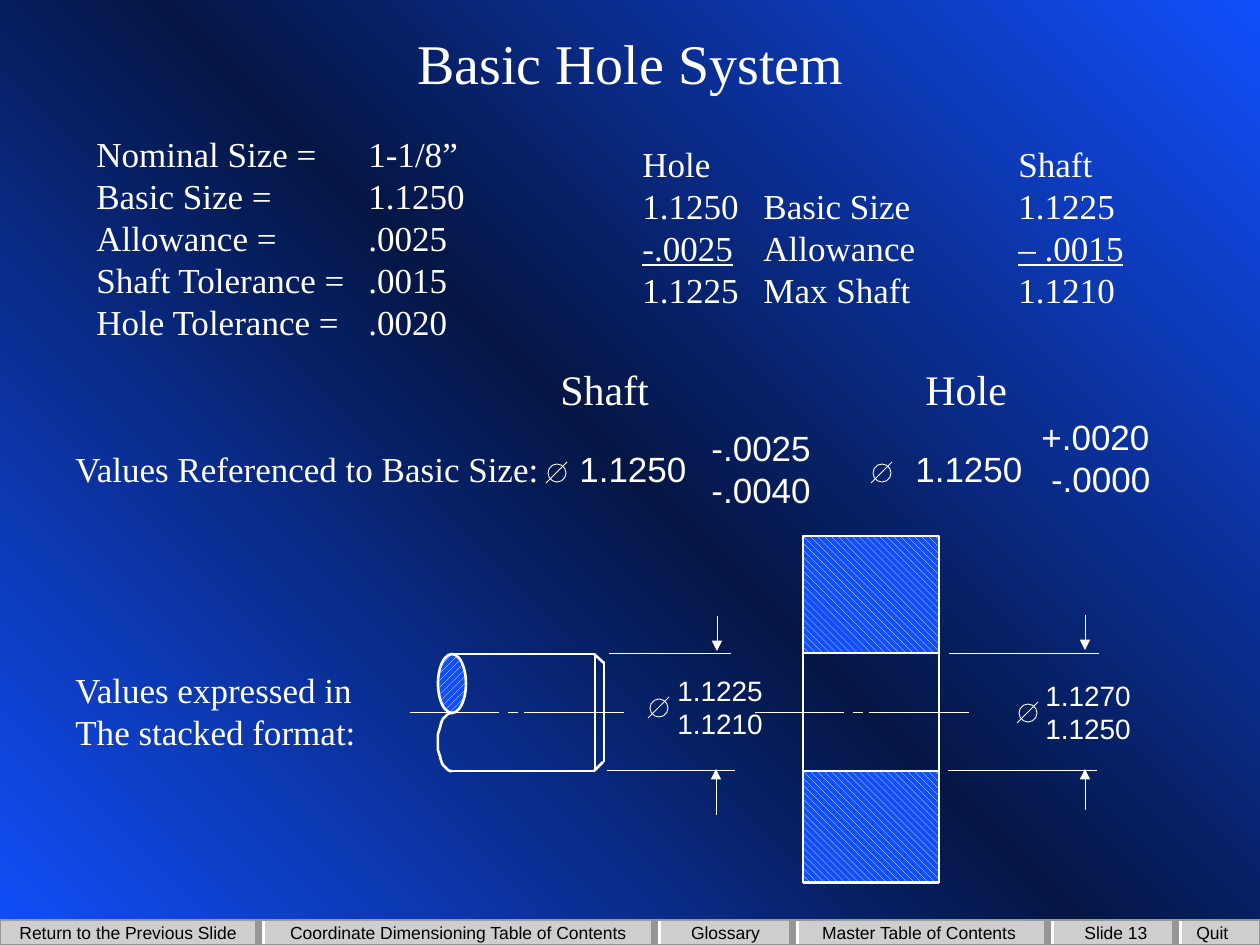
from copy import deepcopy
from dataclasses import dataclass
from math import cos, pi, sin

from pptx import Presentation
from pptx.dml.color import RGBColor
from pptx.enum.dml import MSO_PATTERN
from pptx.enum.shapes import MSO_CONNECTOR, MSO_SHAPE
from pptx.enum.text import MSO_ANCHOR, PP_ALIGN
from pptx.oxml.ns import qn
from pptx.oxml.xmlchemy import OxmlElement
from pptx.util import Inches, Pt


@dataclass(frozen=True)
class Theme:
    white: RGBColor = RGBColor.from_string("FFFFFF")
    black: RGBColor = RGBColor.from_string("000000")
    bright: RGBColor = RGBColor.from_string("114FFB")
    navy: RGBColor = RGBColor.from_string("051645")
    button: RGBColor = RGBColor.from_string("CECECE")
    groove: RGBColor = RGBColor.from_string("969696")
    serif: str = "Times New Roman"
    sans: str = "Arial"
    title: int = 32
    heading: int = 24
    body: int = 20
    stacked: int = 16
    footer: int = 10
    outline: float = 1.5
    thin: float = 0.5
    divider: float = 4
    border: float = 1.25


def px(length):
    return Inches(length / 126)


def write(frame, text, size, font, color, align=PP_ALIGN.LEFT, stops=(),
          underlined=(), anchor=MSO_ANCHOR.TOP, wrap=True):
    frame.word_wrap = wrap
    frame.vertical_anchor = anchor
    for row, line in enumerate(text.split("\n")):
        paragraph = frame.add_paragraph() if row else frame.paragraphs[0]
        paragraph.alignment = align
        if stops:
            tabs = OxmlElement("a:tabLst")
            for stop in stops:
                tab = OxmlElement("a:tab")
                tab.set("pos", str(px(stop)))
                tab.set("algn", "l")
                tabs.append(tab)
            paragraph._p.get_or_add_pPr().append(tabs)
        for column, cell in enumerate(line.split("\t")):
            for piece in (["\t"] if column else []) + [cell]:
                run = paragraph.add_run()
                run.text = piece
                run.font.size = Pt(size)
                run.font.name = font
                run.font.color.rgb = color
                run.font.underline = piece in underlined


class Drawing:
    """Draws styled elements on the current slide."""

    def __init__(self, slide, theme):
        self.slide = slide
        self.shapes = slide.shapes
        self.theme = theme

    def background(self, *colors):
        fill = self.slide.background.fill
        fill.gradient()
        fill.gradient_angle = 45
        first = next(self.slide._element.iter(qn("a:gs")))
        first.addnext(deepcopy(first))
        for index, (stop, color) in enumerate(zip(fill.gradient_stops, colors)):
            stop.position = index / (len(colors) - 1)
            stop.color.rgb = color

    def text(self, left, top, width, height, content, size=None, font=None,
             color=None, **layout):
        box = self.shapes.add_textbox(px(left), px(top), px(width), px(height))
        write(box.text_frame, content, size or self.theme.body,
              font or self.theme.serif, color or self.theme.white, **layout)

    def finish(self, shape, fill=None, pattern=None, line=None, weight=None):
        shape.shadow.inherit = False
        if pattern is not None:
            shape.fill.patterned()
            shape.fill.pattern = pattern
            shape.fill.fore_color.rgb = self.theme.white
            shape.fill.back_color.rgb = self.theme.bright
        elif fill is not None:
            shape.fill.solid()
            shape.fill.fore_color.rgb = fill
        else:
            shape.fill.background()
        if line is None:
            shape.line.fill.background()
        else:
            shape.line.color.rgb = line
            shape.line.width = Pt(weight)

    def shape(self, kind, left, top, width, height, **style):
        shape = self.shapes.add_shape(kind, px(left), px(top), px(width), px(height))
        self.finish(shape, **style)
        return shape

    def curve(self, points, weight):
        builder = self.shapes.build_freeform(*points[0], scale=px(1))
        builder.add_line_segments(points[1:], close=False)
        self.finish(builder.convert_to_shape(), line=self.theme.white, weight=weight)

    def line(self, x1, y1, x2, y2, weight=None, color=None, arrow=False):
        line = self.shapes.add_connector(
            MSO_CONNECTOR.STRAIGHT, px(x1), px(y1), px(x2), px(y2))
        line.line.color.rgb = color or self.theme.white
        line.line.width = Pt(weight or self.theme.thin)
        if arrow:
            head = OxmlElement("a:headEnd")
            head.set("type", "triangle")
            line.line._get_or_add_ln().append(head)
        line._element.spPr.append(OxmlElement("a:effectLst"))

    def diameter(self, left, top):
        self.shape(MSO_SHAPE.OVAL, left, top, 18, 18,
                   line=self.theme.white, weight=self.theme.thin)
        self.line(left + 19, top - 2, left - 2, top + 19)

    def button(self, left, width, label):
        button = self.shape(MSO_SHAPE.RECTANGLE, left, 921, width, 23,
                            fill=self.theme.button)
        write(button.text_frame, label, self.theme.footer, self.theme.sans,
              self.theme.black, align=PP_ALIGN.CENTER,
              anchor=MSO_ANCHOR.MIDDLE, wrap=False)


def draw_footer(drawing, theme):
    drawing.shape(MSO_SHAPE.RECTANGLE, 0, 920, 1260, 25, fill=theme.button,
                  line=theme.groove, weight=theme.border)
    for left, width, label in ((2, 252, "Return to the Previous Slide"),
                               (267, 382, "Coordinate Dimensioning Table of Contents"),
                               (663, 125, "Glossary"),
                               (815, 208, "Master Table of Contents")):
        drawing.button(left, width, label)
    for left, width, label in ((1072, 95, "Slide 13"), (1184, 63, "Quit")):
        drawing.text(left, 921, width, 23, label, theme.footer, theme.sans,
                     theme.black, anchor=MSO_ANCHOR.MIDDLE, wrap=False)
    for x in (262, 658, 796, 1051, 1179):
        drawing.line(x, 944, x, 921, theme.divider)
        drawing.line(x - 3, 944, x - 3, 921, theme.divider, theme.groove)


def draw_parts(drawing, theme):
    outline = {"line": theme.white, "weight": theme.outline}
    angles = [pi * (1.5 - step / 24) for step in range(25)]
    drawing.curve([(round(452 + 14 * cos(a), 2), round(742 + 29 * sin(a), 2))
                   for a in angles], theme.outline)
    drawing.shape(MSO_SHAPE.OVAL, 438, 654, 28, 59,
                  pattern=MSO_PATTERN.WIDE_UPWARD_DIAGONAL, **outline)
    shaft = ((452, 654, 595, 654), (452, 771, 595, 771), (595, 654, 595, 771),
             (594, 654, 604, 663), (604, 662, 604, 762), (594, 771, 603, 762))
    bushing = ((803, 536, 803, 883), (803, 883, 939, 883), (939, 883, 939, 536),
               (939, 536, 803, 536), (803, 653, 939, 653), (803, 771, 939, 771))
    for edge in shaft + bushing:
        drawing.line(*edge, theme.outline)
    for top, height in ((536, 117), (771, 111)):
        drawing.shape(MSO_SHAPE.RECTANGLE, 803, top, 136, height,
                      pattern=MSO_PATTERN.WIDE_DOWNWARD_DIAGONAL, **outline)
    for offset in (0, 345):
        for start, end in ((410, 499), (508, 518), (524, 624)):
            drawing.line(start + offset, 712, end + offset, 712)
    for start, end, y in ((609, 731, 653), (607, 735, 770),
                          (949, 1099, 653), (948, 1097, 770)):
        drawing.line(start, y, end, y)
    for x, tip, tail in ((717, 651, 616), (716, 769, 815),
                         (1085, 650, 615), (1085, 769, 810)):
        drawing.line(x, tip, x, tail, arrow=True)


def draw_values(drawing, theme):
    drawing.text(95, 21, 1071, 82, "Basic Hole System", theme.title,
                 align=PP_ALIGN.CENTER, anchor=MSO_ANCHOR.MIDDLE)
    drawing.text(84, 126, 406, 224,
                 "Nominal Size =\t1-1/8”\nBasic Size =\t1.1250\nAllowance =\t.0025\n"
                 "Shaft Tolerance =\t.0015\nHole Tolerance =\t.0020", stops=(272,))
    drawing.text(630, 136, 600, 183,
                 "Hole\t\tShaft\n1.1250\tBasic Size\t1.1225\n"
                 "-.0025\tAllowance\t– .0015\n1.1225\tMax Shaft\t1.1210",
                 stops=(121, 376), underlined=("-.0025", "– .0015"))
    drawing.text(548, 357, 515, 64, "Shaft\tHole", theme.heading, stops=(365,))
    drawing.text(63, 441, 500, 55, "Values Referenced to Basic Size:")
    drawing.text(63, 662, 312, 97, "Values expressed in\nThe stacked format:")
    for left, top, width, height, label, size in (
            (567, 441, 136, 55, "1.1250", theme.body),
            (903, 441, 136, 55, "1.1250", theme.body),
            (699, 420, 147, 97, "-.0025\n-.0040", theme.body),
            (1029, 409, 158, 97, "+.0020\n -.0000", theme.body),
            (665, 667, 111, 81, "1.1225\n1.1210", theme.stacked),
            (1033, 672, 111, 81, "1.1270\n1.1250", theme.stacked)):
        drawing.text(left, top, width, height, label, size, theme.sans)
    for left, top in ((650, 699), (1019, 704), (548, 464), (873, 464)):
        drawing.diameter(left, top)


def main():
    theme = Theme()
    deck = Presentation()
    deck.slide_width, deck.slide_height = px(1260), px(945)
    drawing = Drawing(deck.slides.add_slide(deck.slide_layouts[6]), theme)
    drawing.background(theme.bright, theme.navy, theme.bright)
    draw_footer(drawing, theme)
    draw_parts(drawing, theme)
    draw_values(drawing, theme)
    deck.save("out.pptx")


if __name__ == "__main__":
    main()
